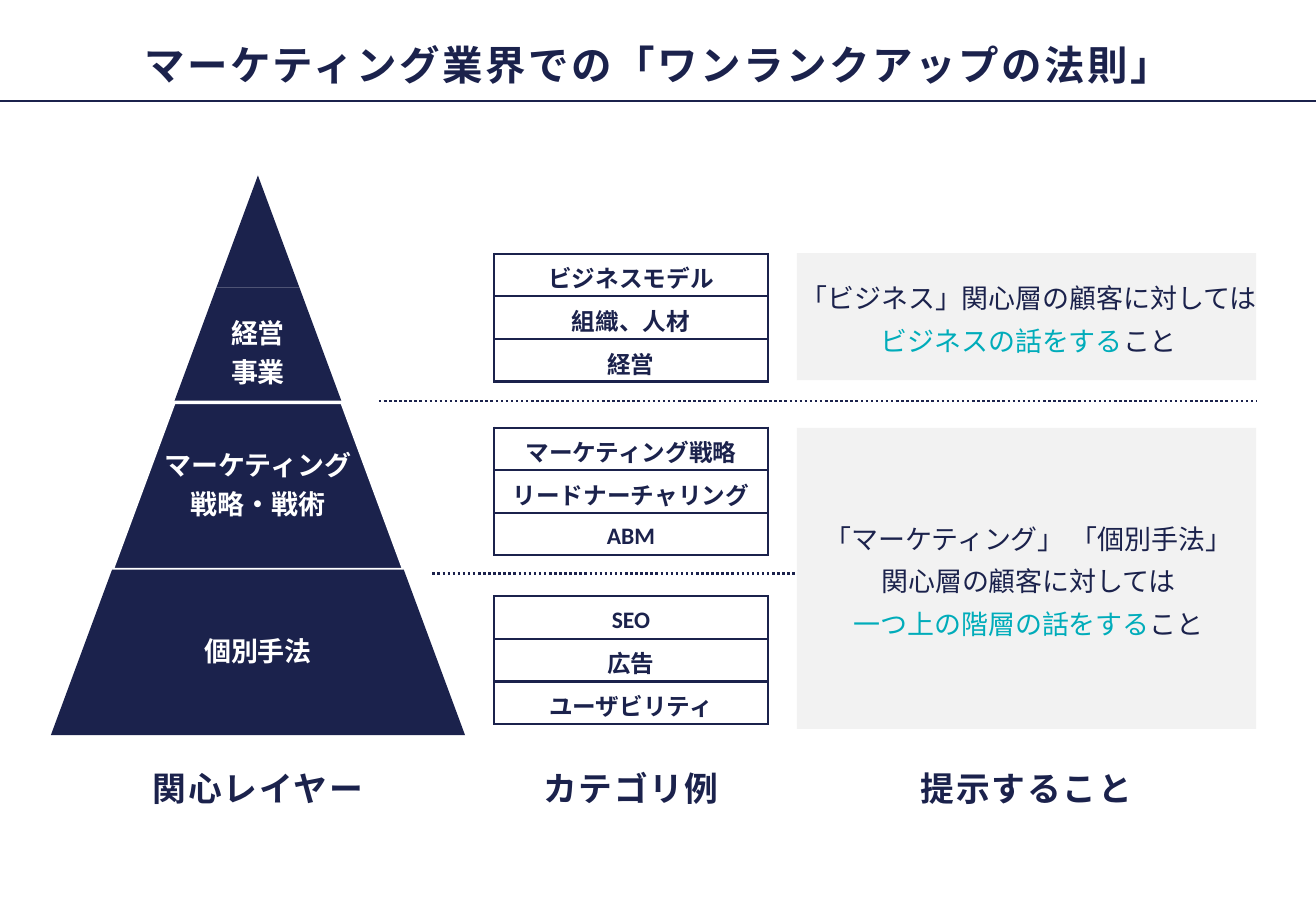
from dataclasses import dataclass

from lxml.etree import SubElement
from pptx import Presentation
from pptx.dml.color import RGBColor as RGB
from pptx.enum.dml import MSO_LINE
from pptx.enum.shapes import MSO_CONNECTOR, MSO_SHAPE
from pptx.enum.text import MSO_ANCHOR as Anchor, PP_ALIGN
from pptx.oxml.ns import qn
from pptx.util import Pt


@dataclass(frozen=True)
class Theme:
    navy: RGB = RGB(0x1B, 0x22, 0x4C)
    teal: RGB = RGB(0x00, 0xAC, 0xBA)
    white: RGB = RGB(0xFF, 0xFF, 0xFF)
    grey: RGB = RGB(0xF2, 0xF2, 0xF2)
    font: str = "Arial"
    table_font: str = "Calibri"
    title: int = 24
    heading: int = 20
    body: int = 16
    cell: int = 14


class SlideBuilder:
    def __init__(self, slide, theme):
        self.shapes = slide.shapes
        self.theme = theme

    def fill_frame(self, frame, lines, size, color=None, bold=True, tracking=0,
                   spacing=None, after=0, anchor=Anchor.MIDDLE, insets=(0, 0, 0, 0), wrap=False):
        """Fill a text frame; a line is a string or a list of (text, color) runs."""
        frame.word_wrap = wrap
        frame.vertical_anchor = anchor
        (frame.margin_left, frame.margin_top,
         frame.margin_right, frame.margin_bottom) = map(Pt, insets)
        for index, line in enumerate(lines):
            paragraph = frame.add_paragraph() if index else frame.paragraphs[0]
            self.style(paragraph, size, color, bold)
            paragraph.space_after = Pt(after)
            if spacing:
                paragraph.line_spacing = spacing
            for text, run_color in [(line, None)] if isinstance(line, str) else line:
                run = paragraph.add_run()
                run.text = text
                if run_color is not None:
                    run.font.color.rgb = run_color
                if tracking:
                    run._r.get_or_add_rPr().set("spc", str(int(tracking * 100)))

    def style(self, paragraph, size, color=None, bold=True, font=None):
        paragraph.alignment = PP_ALIGN.CENTER
        paragraph.font.size = Pt(size)
        paragraph.font.bold = bold
        paragraph.font.name = font or self.theme.font
        paragraph.font.color.rgb = self.theme.navy if color is None else color

    def text(self, box, lines, size, **options):
        self.fill_frame(self.shapes.add_textbox(*map(Pt, box)).text_frame, lines, size, **options)

    def line(self, x1, x2, y, width, dash=None):
        rule = self.shapes.add_connector(MSO_CONNECTOR.STRAIGHT, Pt(x1), Pt(y), Pt(x2), Pt(y))
        rule.line.color.rgb = self.theme.navy
        rule.line.width = Pt(width)
        if dash:
            rule.line.dash_style = dash
        SubElement(rule._element.spPr, qn("a:effectLst"))

    def shape(self, kind, box, fill):
        shape = self.shapes.add_shape(kind, *map(Pt, box))
        shape.shadow.inherit = False
        shape.fill.solid()
        shape.fill.fore_color.rgb = fill
        shape.line.fill.background()
        return shape

    def card(self, box, lines):
        card = self.shape(MSO_SHAPE.RECTANGLE, box, self.theme.grey)
        self.fill_frame(card.text_frame, lines, self.theme.body, bold=False, after=6,
                        insets=(20, 14.4, 17.3, 11.5))

    def layer(self, center, apex, top, bottom, slope, outlined=False):
        """Draw the slice of a pyramid between two heights and return its box."""
        height, half = bottom - top, (bottom - apex) * slope
        box = (center - half, top, 2 * half, height)
        layer = self.shape(MSO_SHAPE.TRAPEZOID, box, self.theme.navy)
        layer.adjustments[0] = slope * height / min(2 * half, height)
        if outlined:
            layer.line.color.rgb = self.theme.white
            layer.line.width = Pt(2)
        return box

    def table(self, left, top, width, row_height, entries):
        frame = self.shapes.add_table(len(entries), 1, Pt(left), Pt(top), Pt(width),
                                      Pt(row_height * len(entries)))
        table = frame.table
        table.first_row = table.horz_banding = False
        for row, entry in zip(table.rows, entries):
            row.height = Pt(row_height)
            cell = row.cells[0]
            cell.vertical_anchor = Anchor.MIDDLE
            cell.margin_left = cell.margin_right = cell.margin_bottom = 0
            cell.margin_top = Pt(3)
            self.border(cell, 1.5)
            cell.fill.background()
            paragraph = cell.text_frame.paragraphs[0]
            paragraph.text = entry
            self.style(paragraph, self.theme.cell, font=self.theme.table_font)

    def border(self, cell, width):
        properties = cell._tc.get_or_add_tcPr()
        for side in ("lnL", "lnR", "lnT", "lnB"):
            edge = SubElement(properties, qn(f"a:{side}"), w=str(int(Pt(width))))
            fill = SubElement(edge, qn("a:solidFill"))
            SubElement(fill, qn("a:srgbClr"), val=str(self.theme.navy))


def main():
    deck = Presentation()
    deck.slide_width, deck.slide_height = Pt(780), Pt(540)
    theme = Theme()
    page = SlideBuilder(deck.slides.add_slide(deck.slide_layouts[6]), theme)

    page.line(0, 780, 60, 1)
    page.text((36, 12, 708, 37.5), ["マーケティング業界での「ワンランクアップの法則」"], theme.title,
              tracking=1.5, spacing=1.5, insets=(3, 3, 3, 3))

    pyramid, categories, messages = (30.2, 245.4), (293, 162), (472.3, 272.2)
    for (left, width), heading in ((pyramid, "関心レイヤー"), (categories, "カテゴリ例"),
                                   (messages, "提示すること")):
        page.text((left, 455.3, width, 24.5), [heading], theme.heading,
                  tracking=1, anchor=Anchor.TOP, wrap=True)

    for left, y in ((224.6, 237.6), (256.3, 339.8)):
        page.line(left, sum(messages), y, 1.5, MSO_LINE.ROUND_DOT)

    for top, entries in (
        (150.5, ("ビジネスモデル", "組織、人材", "経営")),
        (253.5, ("マーケティング戦略", "リードナーチャリング", "ABM")),
        (353.5, ("SEO", "広告", "ユーザビリティ")),
    ):
        page.table(categories[0], top, categories[1], 25.2, entries)

    for top, height, lines in (
        (150, 75.4, ["「ビジネス」関心層の顧客に対しては",
                     [("ビジネスの話をする", theme.teal), ("こと", None)]]),
        (253.6, 178.5, ["「マーケティング」 「個別手法」", "関心層の顧客に対しては",
                        [("一つ上の階層の話をする", theme.teal), ("こと", None)]]),
    ):
        page.card((messages[0], top, messages[1], height), lines)

    apex, center = 104, pyramid[0] + pyramid[1] / 2
    slope = 0.37
    for top, bottom, lines, inset, outlined in (
        (apex, 170.4, (), 0, False),
        (170.4, 238.5, ("経営", "事業"), 11.5, False),
        (238.5, 337.7, ("マーケティング", "戦略・戦術"), 0, True),
        (337.7, 435.7, ("個別手法",), 0, False),
    ):
        box = page.layer(center, apex, top, bottom, slope, outlined)
        if lines:
            page.text(box, lines, theme.body, color=theme.white, spacing=0.9, after=5.6,
                      insets=(0, inset, 0, 0))

    deck.save("out.pptx")


if __name__ == "__main__":
    main()
